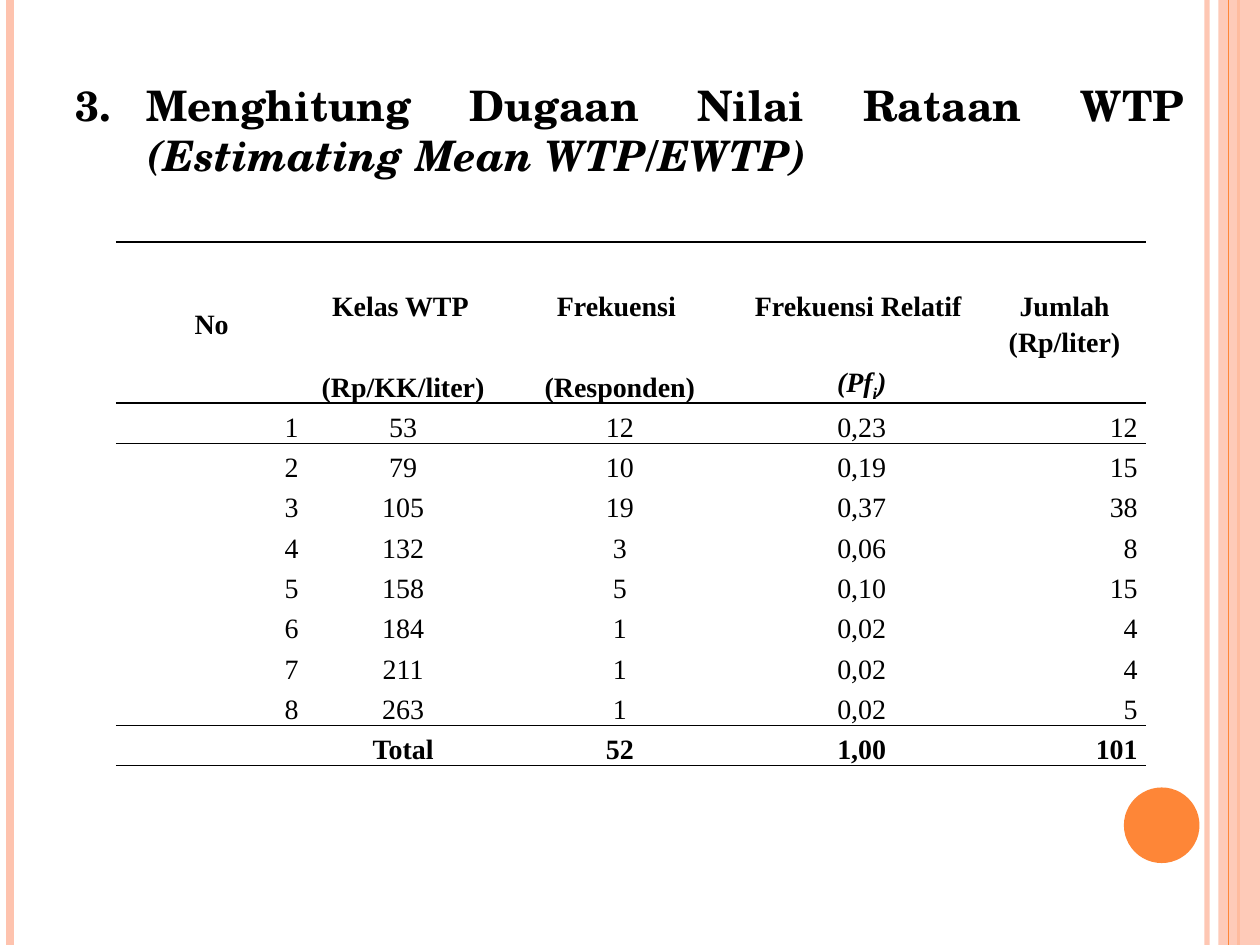
import pptx
import pptx.util
import pptx.dml.color
import pptx.enum.shapes
import pptx.enum.text
import pptx.oxml
import pptx.oxml.ns
import lxml.etree

Inches = pptx.util.Inches
Pt = pptx.util.Pt
ALIGN = pptx.enum.text.PP_ALIGN
ANCHOR = pptx.enum.text.MSO_ANCHOR
SHAPE = pptx.enum.shapes.MSO_SHAPE
qn = pptx.oxml.ns.qn

BLACK, PEACH, ORANGE = "000000", "FEC3AE", "FE8637"
PLAIN = "{2D5ABB26-0587-4C30-8999-92F81FD0307C}"
COLS = [1.52, 1.52, 1.92, 1.92, 1.3]
HEAD = [
    ["No", "Kelas WTP ", "Frekuensi ", "Frekuensi Relatif ", "Jumlah (Rp/liter)"],
    ["", "(Rp/KK/liter)", "(Responden)", "", ""],
]
DATA = [
    ["1", "53", "12", "0,23", "12"],
    ["2", "79", "10", "0,19", "15"],
    ["3", "105", "19", "0,37", "38"],
    ["4", "132", "3", "0,06", "8"],
    ["5", "158", "5", "0,10", "15"],
    ["6", "184", "1", "0,02", "4"],
    ["7", "211", "1", "0,02", "4"],
    ["8", "263", "1", "0,02", "5"],
]
TOTAL = ["", "Total", "52", "1,00", "101"]


def paint(fmt, color, alpha=100):
    """Give a fill a solid colour, with its opacity in percent."""
    fmt.solid()
    fmt.fore_color.rgb = pptx.dml.color.RGBColor.from_string(color)
    if alpha < 100:
        tint = fmt._xPr.find(".//" + qn("a:srgbClr"))
        lxml.etree.SubElement(tint, qn("a:alpha"), val=str(alpha * 1000))


def add_run(para, text, font, size, bold=False, italic=False):
    run = para.add_run()
    run.text = text
    run.font.name = font
    run.font.size = Pt(size)
    run.font.bold = bold
    run.font.italic = italic
    paint(run.font.fill, BLACK)
    return run


def add_rule(slide, x, top, height, color, width, alpha=100):
    rule = slide.shapes.add_connector(
        pptx.enum.shapes.MSO_CONNECTOR.STRAIGHT,
        Inches(x), Inches(top), Inches(x), Inches(top + height))
    rule.line.width = Pt(width)
    paint(rule.line.fill, color, alpha)
    lxml.etree.SubElement(rule._element.spPr, qn("a:effectLst"))


def add_block(slide, kind, box, color, alpha=100):
    block = slide.shapes.add_shape(kind, *map(Inches, box))
    block.shadow.inherit = False
    paint(block.fill, color, alpha)
    block.line.fill.background()


def add_frame(slide, left, top, width, height):
    """Draw the side stripes and the disc on the slide area."""
    right = left + width
    add_rule(slide, right - 0.42, top, height, PEACH, 3, 93)
    add_rule(slide, left + 0.08, top, height, PEACH, 4.5)
    add_rule(slide, right - 0.17, top, height, ORANGE, 1.5)
    add_block(slide, SHAPE.RECTANGLE, (right - 0.33, top, 0.33, height), PEACH, 87)
    add_rule(slide, right - 0.25, top, height, ORANGE, 0.75)
    add_block(slide, SHAPE.OVAL, (right - 1.08, top + height - 1.25, 0.6, 0.6), ORANGE)


def add_heading(slide, left, top, width, height):
    body = slide.placeholders[1]
    body.left, body.top = Inches(left), Inches(top)
    body.width, body.height = Inches(width), Inches(height)
    frame = body.text_frame
    frame.auto_size = pptx.enum.text.MSO_AUTO_SIZE.NONE
    frame.vertical_anchor = ANCHOR.TOP
    para = frame.paragraphs[0]
    para.alignment = ALIGN.JUSTIFY
    para.space_before = Pt(6)
    props = para._p.get_or_add_pPr()
    props.set("marL", str(Inches(0.56)))
    props.set("indent", str(Inches(-0.56)))
    lxml.etree.SubElement(props, qn("a:buFont"), typeface="+mj-lt")
    lxml.etree.SubElement(props, qn("a:buAutoNum"), type="arabicPeriod", startAt="3")
    font = "TeX Gyre Schola"
    add_run(para, "Menghitung Dugaan Nilai Rataan WTP ", font, 24, True)
    add_run(para, "(Estimating Mean WTP/EWTP)", font, 24, True, True)


def set_edges(cell, sides):
    """Draw 1 pt black lines on the named sides, T before B."""
    props = cell._tc.get_or_add_tcPr()
    for spot, side in enumerate(sides):
        props.insert(spot, pptx.oxml.parse_xml(
            f'<a:ln{side} {pptx.oxml.ns.nsdecls("a")} w="{Pt(1)}"><a:solidFill>'
            f'<a:srgbClr val="{BLACK}"/></a:solidFill></a:ln{side}>'))


def fill_cell(cell, text, align, bold, sides):
    cell.fill.background()
    cell.margin_left = cell.margin_right = Inches(0.07)
    cell.margin_top = cell.margin_bottom = 0
    cell.vertical_anchor = ANCHOR.BOTTOM
    para = cell.text_frame.paragraphs[0]
    para.alignment = align
    para.line_spacing = 1.15
    if text:
        add_run(para, text, "Times New Roman", 16, bold)
    set_edges(cell, sides)


def add_symbol(para):
    """Write the relative frequency symbol with its subscript."""
    for text, base in (("(Pf", 0), ("i", -25), (")", 0)):
        run = add_run(para, text, "Times New Roman", 16, True, True)
        if base:
            run._r.get_or_add_rPr().set("baseline", str(base * 1000))


def add_grid(slide, left, top, width, height):
    rows = HEAD + DATA + [TOTAL]
    last = len(rows) - 1
    edges = {0: "T", 1: "B", 2: "T", last - 1: "B", last: "TB"}
    frame = slide.shapes.add_table(
        len(rows), len(COLS), *map(Inches, (left, top, width, height)))
    grid = frame.table
    grid.first_row = grid.horz_banding = False
    grid._tbl.tblPr.find(qn("a:tableStyleId")).text = PLAIN
    for col, size in zip(grid.columns, COLS):
        col.width = Inches(size)
    for r, row in enumerate(rows):
        grid.rows[r].height = Inches(0.64 if r < len(HEAD) else 0.32)
        for c, text in enumerate(row):
            outer = c in (0, len(COLS) - 1)
            align = ALIGN.RIGHT if outer and r >= len(HEAD) else ALIGN.CENTER
            sides = "TB" if outer and r == 0 else edges.get(r, "")
            fill_cell(grid.cell(r, c), text, align, r < len(HEAD) or r == last, sides)
    add_symbol(grid.cell(1, 3).text_frame.paragraphs[0])
    for c in (0, len(COLS) - 1):
        grid.cell(0, c).merge(grid.cell(1, c))
        grid.cell(0, c).vertical_anchor = ANCHOR.MIDDLE


def main():
    deck = pptx.Presentation()
    deck.slide_width, deck.slide_height = Inches(10), Inches(7.5)
    slide = deck.slides.add_slide(deck.slide_layouts[1])
    title = slide.shapes.title._element
    title.getparent().remove(title)
    add_frame(slide, 0, 0, 10, 7.5)
    add_heading(slide, 0.5, 0.58, 9, 1.33)
    add_grid(slide, 0.92, 1.92, 8.17, 4.17)
    deck.save("out.pptx")


if __name__ == "__main__":
    main()
